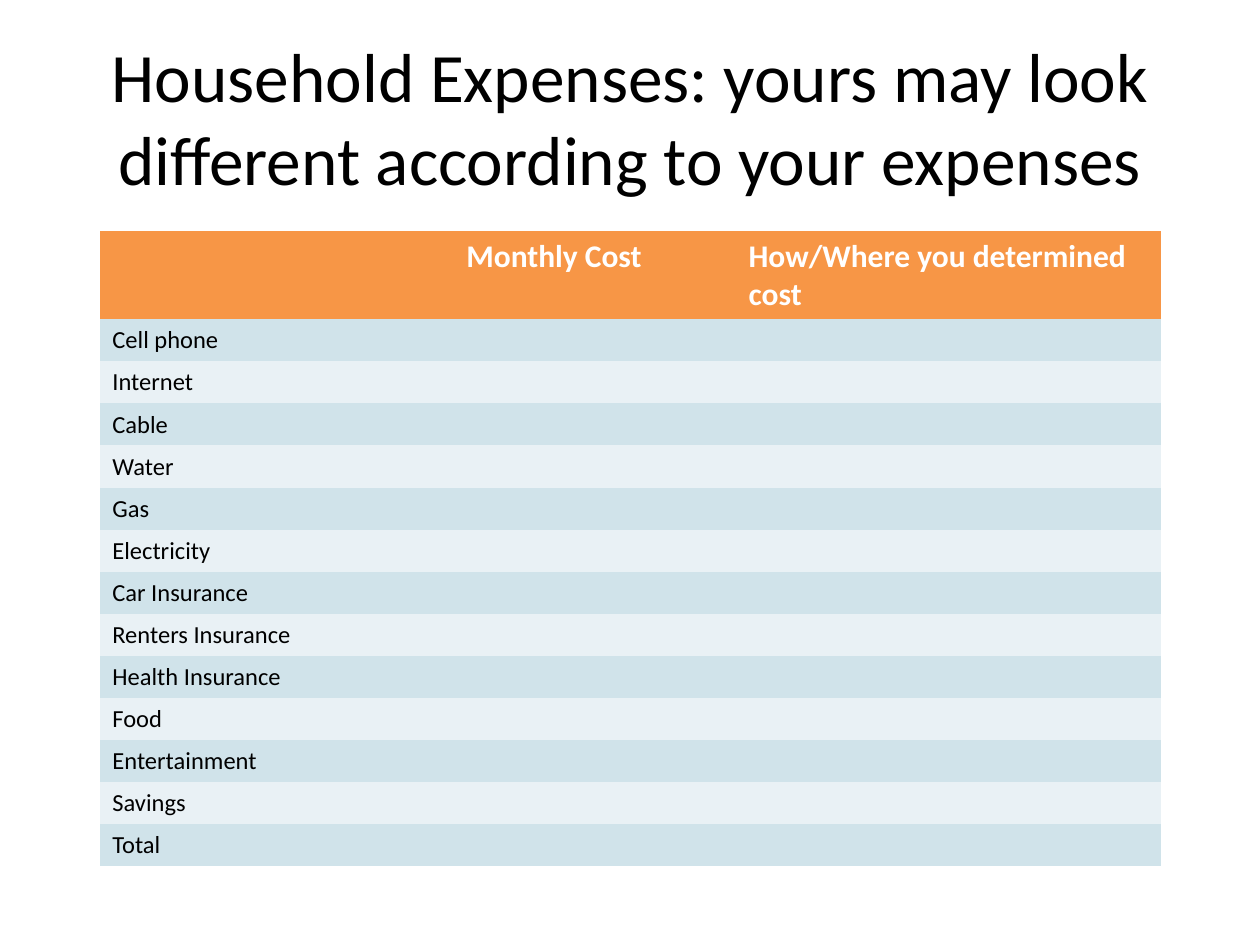
from lxml import etree
from pptx import Presentation
from pptx.dml.color import RGBColor
from pptx.enum import text as t
from pptx.oxml import ns
from pptx.util import Pt

BLACK = RGBColor(0x00, 0x00, 0x00)
WHITE = RGBColor(0xFF, 0xFF, 0xFF)
ORANGE = RGBColor(0xF7, 0x96, 0x46)
BANDS = RGBColor(0xD0, 0xE3, 0xEA), RGBColor(0xE9, 0xF1, 0xF5)
FONT = "Calibri"
PLAIN = "{2D5ABB26-0587-4C30-8999-92F81FD0307C}"

TITLE = "Household Expenses: yours may look different according to your expenses"
HEADS = ["", "Monthly Cost", "How/Where you determined cost"]
ITEMS = [
    "Cell phone", "Internet", "Cable", "Water", "Gas", "Electricity",
    "Car Insurance", "Renters Insurance", "Health Insurance", "Food",
    "Entertainment", "Savings", "Total",
]
WIDTHS = [202.3, 161.3, 242.6]
HEAD_H, ROW_H = 44.6, 23.8


def style(para, size, color, bold=False):
    """Format the runs of a paragraph, or the end mark of an empty one."""
    for run in para.runs:
        font = run.font
        font.name, font.size, font.bold = FONT, Pt(size), bold
        font.color.rgb = color
    if not para.runs:
        end = etree.SubElement(para._p, ns.qn("a:endParaRPr"))
        end.set("sz", str(size * 100))


def add_title(slide):
    """Add the centred heading."""
    frame = slide.shapes.add_textbox(Pt(36), Pt(21.6), Pt(648), Pt(90)).text_frame
    frame.word_wrap = True
    frame.vertical_anchor = t.MSO_ANCHOR.MIDDLE
    frame.text = TITLE
    para = frame.paragraphs[0]
    para.alignment = t.PP_ALIGN.CENTER
    style(para, 39.6, BLACK)


def fill_row(row, words, fill, size, color, bold=False):
    """Write and colour the cells of one table row."""
    for cell, word in zip(row.cells, words):
        cell.fill.solid()
        cell.fill.fore_color.rgb = fill
        cell.text_frame.text = word
        style(cell.text_frame.paragraphs[0], size, color, bold)


def add_costs(slide):
    """Add the banded table of expenses."""
    high = HEAD_H + ROW_H * len(ITEMS)
    frame = slide.shapes.add_table(
        len(ITEMS) + 1, len(HEADS), Pt(57), Pt(132), Pt(sum(WIDTHS)), Pt(high))
    table = frame.table
    table._tbl.tblPr.find(ns.qn("a:tableStyleId")).text = PLAIN
    for col, width in zip(table.columns, WIDTHS):
        col.width = Pt(width)
    head, *body = table.rows
    head.height = Pt(HEAD_H)
    fill_row(head, HEADS, ORANGE, 18, WHITE, True)
    for i, (row, item) in enumerate(zip(body, ITEMS)):
        row.height = Pt(ROW_H)
        fill_row(row, [item, "", ""], BANDS[i % 2], 14, BLACK)


def main():
    """Build and save the slide."""
    deck = Presentation()
    deck.slide_width, deck.slide_height = Pt(720), Pt(540)
    slide = deck.slides.add_slide(deck.slide_layouts[6])
    add_title(slide)
    add_costs(slide)
    deck.save("out.pptx")


if __name__ == "__main__":
    main()
